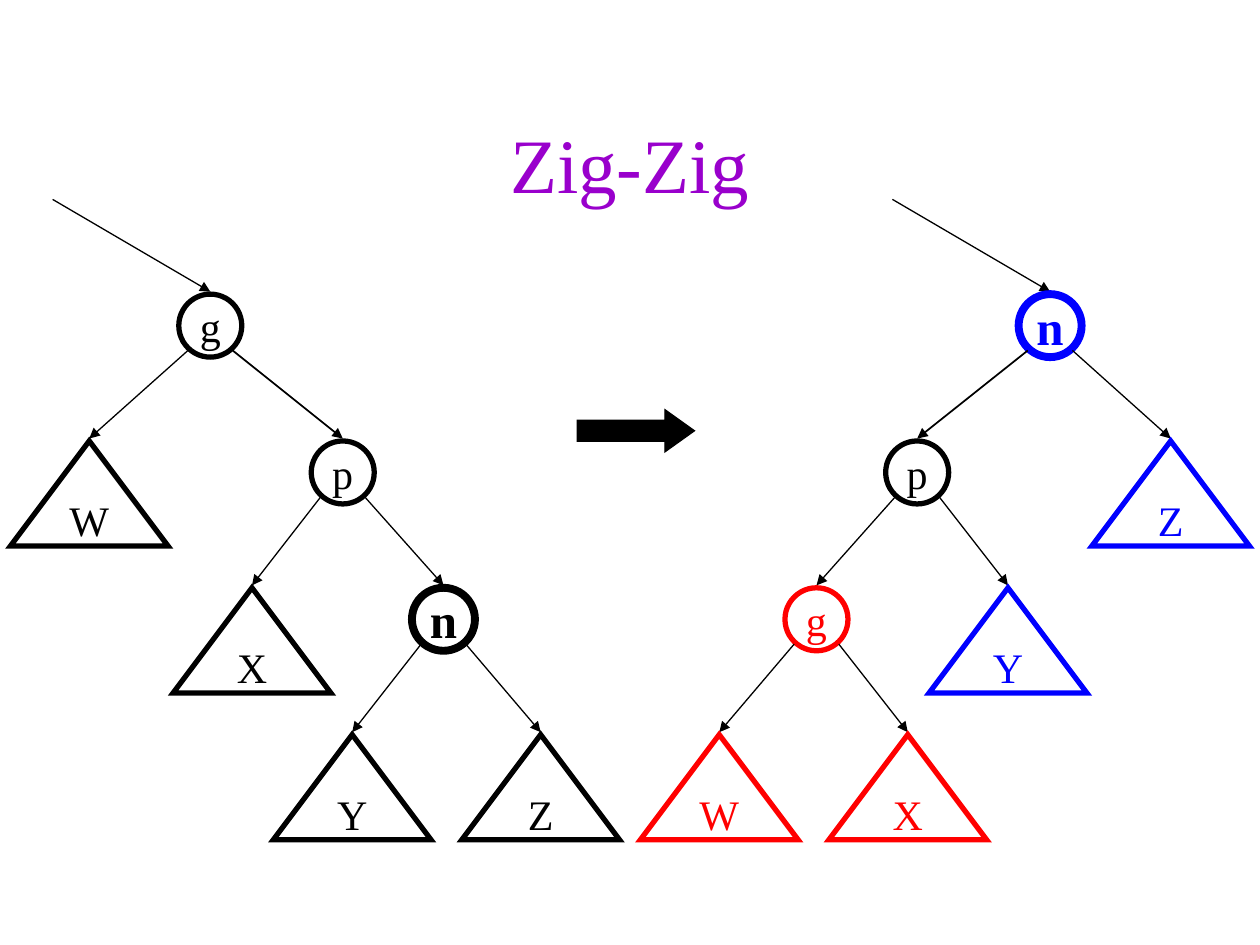
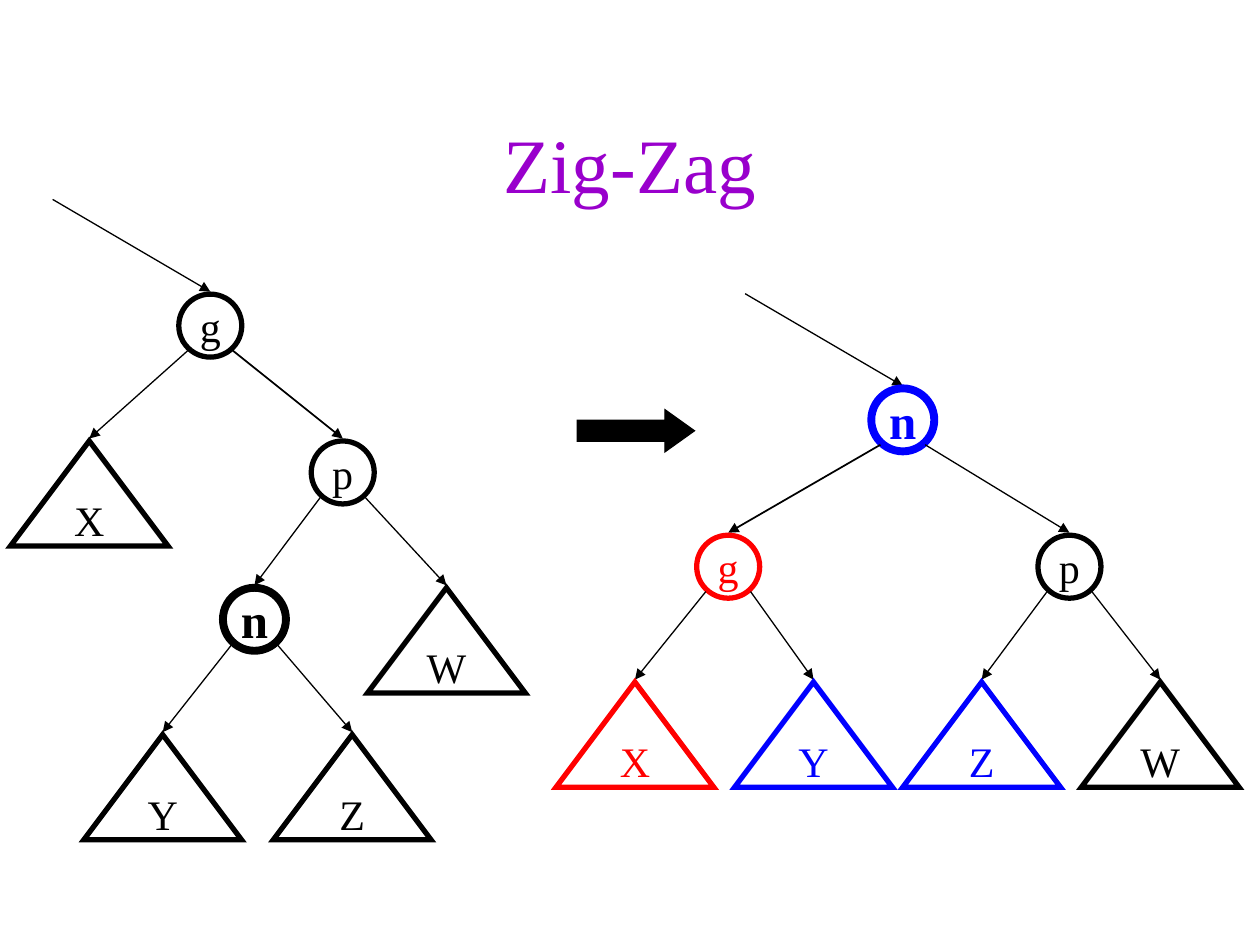
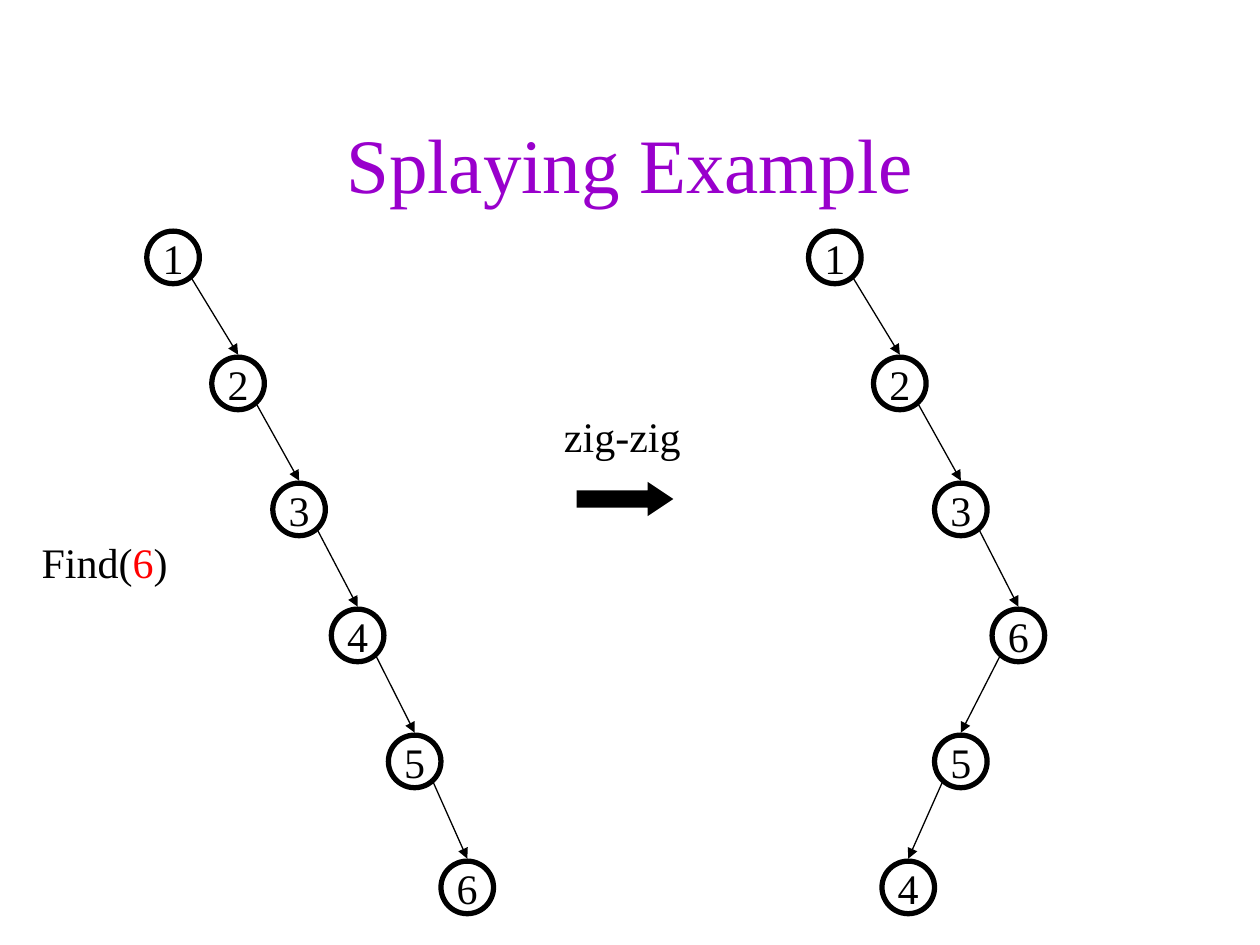
from pptx import Presentation
from pptx.dml.color import RGBColor
from pptx.enum.shapes import MSO_CONNECTOR, MSO_SHAPE
from pptx.enum.text import MSO_ANCHOR, MSO_AUTO_SIZE, PP_ALIGN
from pptx.oxml.ns import qn
from pptx.util import Cm, Pt
from lxml.etree import SubElement

# Shared look
FONT = "Times New Roman"
BLACK, BLUE, RED, PURPLE = "000000", "0000FF", "FF0000", "9900CC"
TITLE_BOX = (1.9, 1.7, 21.6, 3.18)
SUBTREE_WIDTH, SUBTREE_HEIGHT = 3.18, 2.12
ENTRY_RUN, ENTRY_RISE = 3.18, 1.91
GAP = 0.05
DIAGONAL = 0.71
THIN = 0.75

# A node is (label, centre x, colour, children); capital letters are subtrees.
# Lengths are in centimetres.
ROTATION = {"diameter": 1.27, "step": 2.96, "entry": True, "spine": 1}
CHAIN = {"diameter": 1.06, "step": 2.54, "entry": False, "spine": THIN}
ROTATION_ARROW = (11.64, 8.26, 2.36, 0.85, 0.7)

SLIDES = [
    {
        "title": "Zig-Zig", "style": ROTATION, "arrow": ROTATION_ARROW, "captions": [],
        "trees": [
            (5.93, ("g", 4.24, BLACK, [
                ("W", 1.8, BLACK, []),
                ("p", 6.91, BLACK, [
                    ("X", 5.08, BLACK, []),
                    ("n", 8.94, BLACK, [
                        ("Y", 7.1, BLACK, []),
                        ("Z", 10.9, BLACK, [])])])])),
            (5.93, ("n", 21.17, BLUE, [
                ("p", 18.49, BLACK, [
                    ("g", 16.46, RED, [
                        ("W", 14.5, RED, []),
                        ("X", 18.3, RED, [])]),
                    ("Y", 20.32, BLUE, [])]),
                ("Z", 23.6, BLUE, [])])),
        ],
    },
    {
        "title": "Zig-Zag", "style": ROTATION, "arrow": ROTATION_ARROW, "captions": [],
        "trees": [
            (5.93, ("g", 4.24, BLACK, [
                ("X", 1.8, BLACK, []),
                ("p", 6.91, BLACK, [
                    ("n", 5.13, BLACK, [
                        ("Y", 3.28, BLACK, []),
                        ("Z", 7.1, BLACK, [])]),
                    ("W", 9, BLACK, [])])])),
            (7.83, ("n", 18.2, BLUE, [
                ("g", 14.68, RED, [
                    ("X", 12.8, RED, []),
                    ("Y", 16.4, BLUE, [])]),
                ("p", 21.56, BLACK, [
                    ("Z", 19.79, BLUE, []),
                    ("W", 23.39, BLACK, [])])])),
        ],
    },
    {
        "title": "Splaying Example", "style": CHAIN,
        "arrow": (11.64, 9.74, 1.91, 0.64, 0.75),
        "captions": [
            ((0.59, 10.69, 3.1, 1.27), [("Find(", BLACK), ("6", RED), (")", BLACK)]),
            ((11.12, 8.15, 3, 1.27), [("zig-zig", BLACK)]),
        ],
        "trees": [
            (4.66, ("1", 3.49, BLACK, [("2", 4.8, BLACK, [("3", 6.03, BLACK, [
                ("4", 7.21, BLACK, [("5", 8.36, BLACK, [
                    ("6", 9.42, BLACK, [])])])])])])),
            (4.66, ("1", 16.83, BLACK, [("2", 18.14, BLACK, [("3", 19.37, BLACK, [
                ("6", 20.53, BLACK, [("5", 19.37, BLACK, [
                    ("4", 18.31, BLACK, [])])])])])])),
        ],
    },
]


def colour(value):
    return RGBColor.from_string(value)


def centimetres(lengths):
    return [Cm(length) for length in lengths]


def write(shape, runs, size, bold=False, align=PP_ALIGN.CENTER,
          anchor=MSO_ANCHOR.MIDDLE, wrap=False):
    frame = shape.text_frame
    frame.word_wrap, frame.vertical_anchor = wrap, anchor
    paragraph = frame.paragraphs[0]
    paragraph.alignment = align
    for text, text_colour in runs:
        run = paragraph.add_run()
        run.text = text
        for name, value in {"name": FONT, "size": Pt(size), "bold": bold}.items():
            setattr(run.font, name, value)
        run.font.color.rgb = colour(text_colour)


def outline(shape, line_colour, width):
    """Draw the line with sharp corners and return its XML element."""
    shape.line.color.rgb = colour(line_colour)
    shape.line.width = Pt(width)
    line = shape.element.spPr.find(qn("a:ln"))
    SubElement(line, qn("a:miter"), lim="800000")
    return line


def add_pointer(slide, start, end, width=THIN):
    connector = slide.shapes.add_connector(
        MSO_CONNECTOR.STRAIGHT, *centimetres(start + end))
    line = outline(connector, BLACK, width)
    SubElement(line, qn("a:tailEnd"), type="triangle")
    SubElement(connector.element.spPr, qn("a:effectLst"))


def add_node(slide, label, x, top, node_colour, diameter):
    preset, width, height = MSO_SHAPE.OVAL, diameter, diameter
    if label.isupper():
        preset, width, height = (
            MSO_SHAPE.ISOSCELES_TRIANGLE, SUBTREE_WIDTH, SUBTREE_HEIGHT)
    shape = slide.shapes.add_shape(
        preset, *centimetres((x - width / 2, top, width, height)))
    shape.shadow.inherit = False
    shape.fill.background()
    splayed = label == "n"
    outline(shape, node_colour, 4.5 if splayed else 3)
    write(shape, [(label, node_colour)], 28 if splayed else 24, splayed)


def add_tree(slide, node, top, style, is_root=True):
    label, x, node_colour, children = node
    diameter = style["diameter"]
    reach = DIAGONAL * diameter / 2
    if is_root and style["entry"]:
        add_pointer(slide, (x - ENTRY_RUN, top - ENTRY_RISE), (x, top - GAP))
    add_node(slide, label, x, top, node_colour, diameter)
    # The root's first child that is a node carries the heavier edge
    inner = [child for child in children if not child[0].isupper()]
    spine = inner[0] if is_root and inner else None
    for child in children:
        child_x, child_top = child[1], top + style["step"]
        side = 1 if child_x > x else -1
        add_pointer(slide, (x + side * reach, top + diameter / 2 + reach + GAP),
                    (child_x, child_top - GAP),
                    style["spine"] if child is spine else THIN)
        add_tree(slide, child, child_top, style, is_root=False)


def add_step_arrow(slide, left, top, width, height, head):
    arrow = slide.shapes.add_shape(
        MSO_SHAPE.RIGHT_ARROW, *centimetres((left, top, width, height)))
    arrow.adjustments[1] = head
    arrow.shadow.inherit = False
    arrow.fill.solid()
    arrow.fill.fore_color.rgb = colour(BLACK)
    outline(arrow, BLACK, THIN)


def main():
    presentation = Presentation()
    presentation.slide_width, presentation.slide_height = Cm(25.4), Cm(19.05)
    for content in SLIDES:
        slide = presentation.slides.add_slide(presentation.slide_layouts[6])
        # Title
        title = slide.shapes.add_textbox(*centimetres(TITLE_BOX))
        write(title, [(content["title"], PURPLE)], 44, wrap=True)
        # Trees before and after the step
        for top, root in content["trees"]:
            add_tree(slide, root, top, content["style"])
        add_step_arrow(slide, *content["arrow"])
        # Captions
        for box, runs in content["captions"]:
            caption = slide.shapes.add_textbox(*centimetres(box))
            write(caption, runs, 24, align=PP_ALIGN.LEFT, anchor=MSO_ANCHOR.TOP)
            caption.text_frame.auto_size = MSO_AUTO_SIZE.SHAPE_TO_FIT_TEXT
    presentation.save("out.pptx")


if __name__ == "__main__":
    main()
